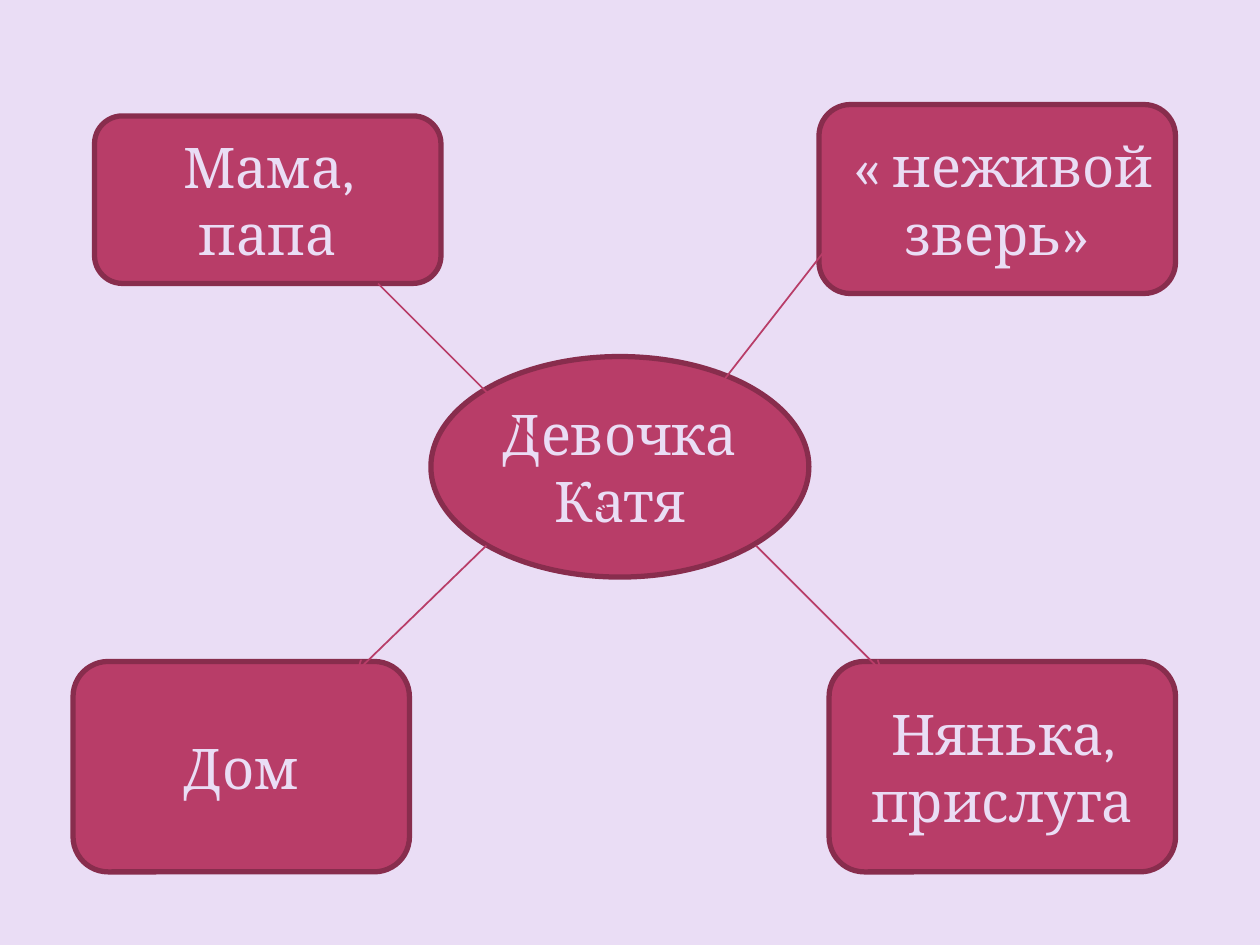
import pptx
import pptx.util
import pptx.dml.color
import pptx.enum.shapes
import pptx.enum.text
import pptx.oxml

Inches = pptx.util.Inches
Pt = pptx.util.Pt
COLORS = {"background": "EADDF5", "fill": "B83D68", "border": "882D4D", "text": "EADDF5"}
ROUNDED = pptx.enum.shapes.MSO_SHAPE.ROUNDED_RECTANGLE
OVAL = pptx.enum.shapes.MSO_SHAPE.OVAL


def color(name):
    return pptx.dml.color.RGBColor.from_string(COLORS[name])


presentation = pptx.Presentation()
presentation.slide_width = Inches(10)
presentation.slide_height = Inches(7.5)
slide = presentation.slides.add_slide(presentation.slide_layouts[6])
slide.background.fill.solid()
slide.background.fill.fore_color.rgb = color("background")

nodes = [
    (ROUNDED, 6.58, 5.25, 2.75, 1.67, "Нянька, прислуга"),
    (ROUNDED, 0.75, 0.92, 2.75, 1.33, "Мама, папа"),
    (ROUNDED, 0.58, 5.25, 2.67, 1.67, "Дом"),
    (ROUNDED, 6.5, 0.83, 2.83, 1.5, " « неживой зверь»"),
    (OVAL, 3.42, 2.83, 3, 1.75, "Девочка \nКатя"),
]
for kind, left, top, width, height, text in nodes:
    shape = slide.shapes.add_shape(kind, Inches(left), Inches(top), Inches(width), Inches(height))
    shape.shadow.inherit = False
    shape.fill.solid()
    shape.fill.fore_color.rgb = color("fill")
    shape.line.color.rgb = color("border")
    shape.line.width = Pt(3)
    text_frame = shape.text_frame
    text_frame.word_wrap = True
    text_frame.vertical_anchor = pptx.enum.text.MSO_ANCHOR.MIDDLE
    text_frame.text = text
    for paragraph in text_frame.paragraphs:
        paragraph.alignment = pptx.enum.text.PP_ALIGN.CENTER
        for run in paragraph.runs:
            run.font.name = "Cambria"
            run.font.size = Pt(32)
            run.font.color.rgb = color("text")

arrows = [
    (6, 4.33, 7, 5.33),
    (3.86, 4.33, 2.83, 5.33),
    (5.75, 3.01, 6.67, 1.83),
    (3.83, 3.08, 4.83, 4.08),
    (3, 2.25, 4.83, 4.08),
]
for points in arrows:
    arrow = slide.shapes.add_connector(
        pptx.enum.shapes.MSO_CONNECTOR.STRAIGHT, *[Inches(value) for value in points]
    )
    arrow.line.color.rgb = color("fill")
    arrow.line.width = Pt(1)
    tail = pptx.oxml.parse_xml(
        '<a:tailEnd xmlns:a="http://schemas.openxmlformats.org/drawingml/2006/main" type="arrow"/>'
    )
    arrow.line._get_or_add_ln().append(tail)
    effects = pptx.oxml.parse_xml(
        '<a:effectLst xmlns:a="http://schemas.openxmlformats.org/drawingml/2006/main"/>'
    )
    arrow._element.spPr.append(effects)

presentation.save("out.pptx")
